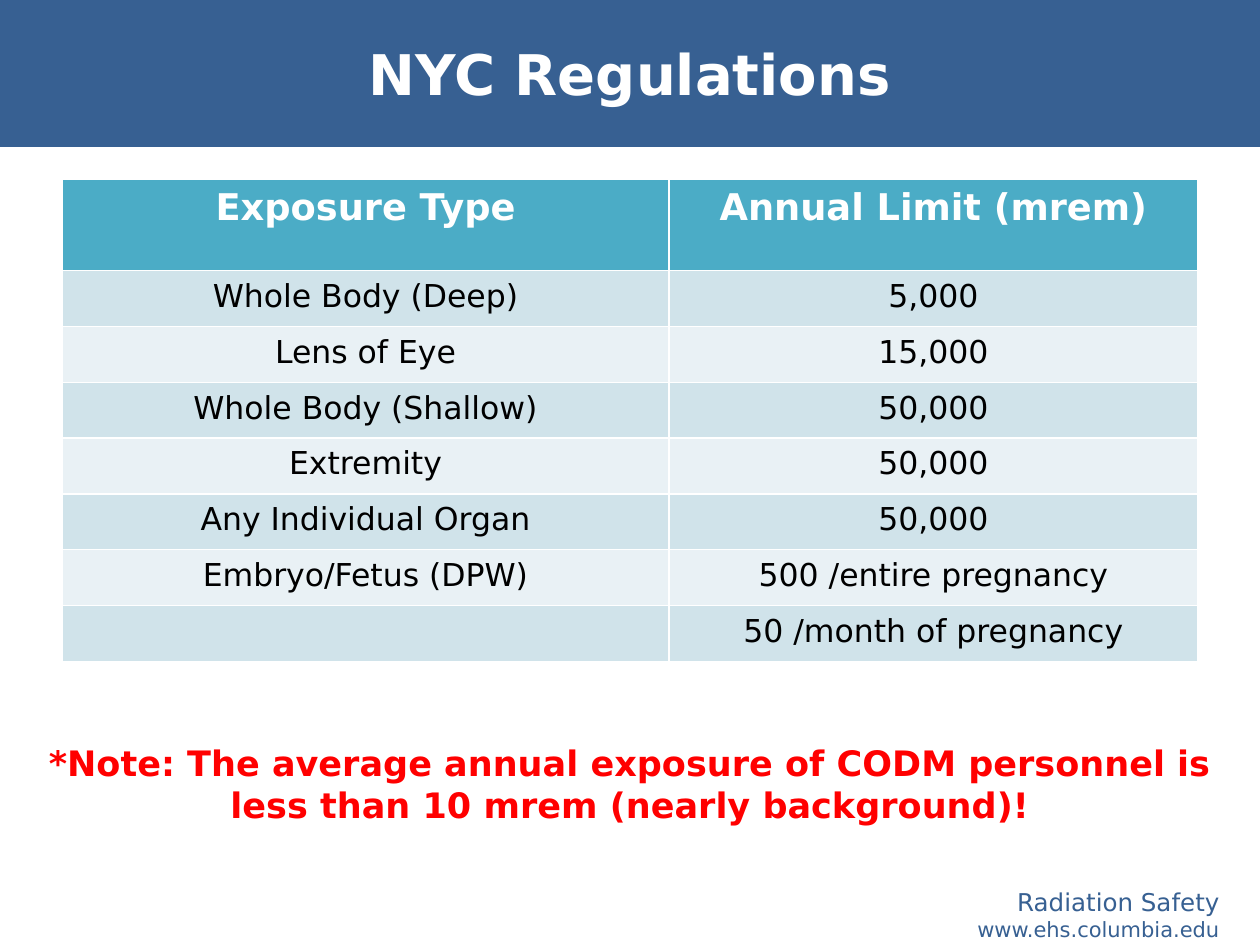
from pptx import Presentation
from pptx.dml.color import RGBColor
from pptx.enum.shapes import MSO_SHAPE
from pptx.enum.text import MSO_ANCHOR, PP_ALIGN
from pptx.util import Pt

FONT = "DejaVu Sans"
COLORS = {
    "navy": "376092", "white": "FFFFFF", "black": "000000", "red": "FF0000",
    "head": "4BACC6", "odd": "D0E3EA", "even": "E9F1F5",
}
LIMITS = [
    ("Exposure Type", "Annual Limit (mrem)"),
    ("Whole Body (Deep)", "5,000"),
    ("Lens of Eye", "15,000"),
    ("Whole Body (Shallow)", "50,000"),
    ("Extremity", "50,000"),
    ("Any Individual Organ", "50,000"),
    ("Embryo/Fetus (DPW)", "500 /entire pregnancy"),
    ("", "50 /month of pregnancy"),
]


def color(name):
    return RGBColor.from_string(COLORS[name])


def write(frame, text, size, tint, bold=False, align=PP_ALIGN.CENTER):
    """Fill a text frame with one paragraph in a single style."""
    frame.text = text
    para = frame.paragraphs[0]
    para.alignment = align
    for run in para.runs:
        run.font.name = FONT
        run.font.size = Pt(size)
        run.font.bold = bold
        run.font.color.rgb = color(tint)


prs = Presentation()
prs.slide_width, prs.slide_height = Pt(720), Pt(540)
slide = prs.slides.add_slide(prs.slide_layouts[5])
shapes = slide.shapes

# Header band, placed behind the title
band = shapes.add_shape(MSO_SHAPE.RECTANGLE, 0, 0, Pt(720), Pt(84))
band.shadow.inherit = False
band.fill.solid()
band.fill.fore_color.rgb = color("navy")
band.line.fill.background()
title = shapes.title
title._element.addprevious(band._element)

title.left, title.top, title.width, title.height = Pt(36), Pt(6), Pt(648), Pt(72)
title.text_frame.vertical_anchor = MSO_ANCHOR.MIDDLE
write(title.text_frame, "NYC Regulations", 32, "white", bold=True)

# Footer
foot = shapes.add_textbox(Pt(548.6), Pt(503.3), Pt(155.5), Pt(39)).text_frame
foot.word_wrap = False
write(foot, "Radiation Safety\vwww.ehs.columbia.edu", 14, "navy", align=PP_ALIGN.RIGHT)
foot.paragraphs[0].runs[1].font.size = Pt(12)

# Exposure limits; the default table style draws the white borders
table = shapes.add_table(len(LIMITS), 2, Pt(35.4), Pt(102.3), Pt(649), Pt(275.7)).table
for col, width in zip(table.columns, (347, 302)):
    col.width = Pt(width)
for r, pair in enumerate(LIMITS):
    table.rows[r].height = Pt(31.9 if r else 52.4)
    fill = ("odd" if r % 2 else "even") if r else "head"
    for c, text in enumerate(pair):
        cell = table.cell(r, c)
        cell.margin_left = cell.margin_right = Pt(8.64)
        cell.margin_top = cell.margin_bottom = Pt(4.32)
        cell.fill.solid()
        cell.fill.fore_color.rgb = color(fill)
        if r:
            write(cell.text_frame, text, 18, "black")
        else:
            write(cell.text_frame, text, 21, "white", bold=True)

# Note
note = shapes.add_textbox(Pt(18), Pt(420), Pt(684), Pt(55.7)).text_frame
note.word_wrap = True
write(note, "*Note: The average annual exposure of CODM personnel is "
      "less than 10 mrem (nearly background)!", 20, "red", bold=True)

prs.save("out.pptx")
